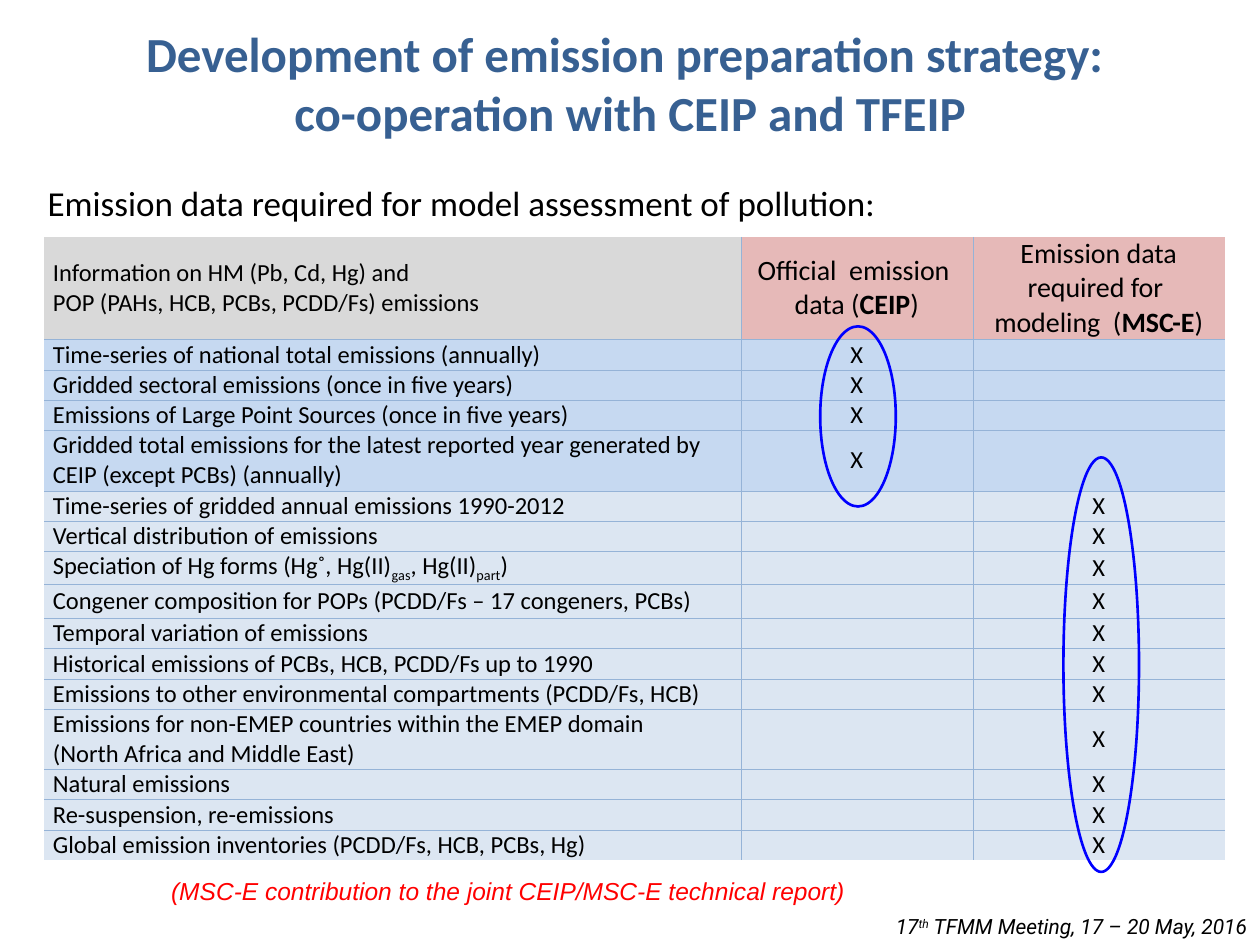
from lxml.etree import SubElement
from pptx import Presentation
from pptx.dml.color import RGBColor
from pptx.enum.shapes import MSO_SHAPE
from pptx.enum.text import MSO_ANCHOR, MSO_AUTO_SIZE, PP_ALIGN
from pptx.oxml.ns import qn
from pptx.util import Inches, Pt


def rgb(value):
    return RGBColor.from_string(value)


def write(paragraph, segments, size, font="Calibri", color="000000", bold=False, italic=False):
    for text, style in segments:
        for index, line in enumerate(text.split("\n")):
            if index:
                paragraph.add_line_break()
            run = paragraph.add_run()
            run.text = line
            run.font.size = Pt(size)
            run.font.name = font
            run.font.color.rgb = rgb(color)
            run.font.bold = bold or style == "bold"
            run.font.italic = italic
            if style in BASELINES:
                run.font._element.set("baseline", BASELINES[style])


BASELINES = {"super": "30000", "sub": "-25000"}
GRID_COLOR = "95B3D7"
HEADINGS = [
    [("Information on HM (Pb, Cd, Hg) and \nPOP (PAHs, HCB, PCBs, PCDD/Fs) emissions", "")],
    [("Official  emission \ndata (", ""), ("CEIP", "bold"), (")", "")],
    [("Emission data required for  modeling  (", ""), ("MSC-E", "bold"), (")", "")],
]
OFFICIAL = [
    "Time-series of national total emissions (annually)",
    "Gridded sectoral emissions (once in five years)",
    "Emissions of Large Point Sources (once in five years)",
    "Gridded total emissions for the latest reported year generated by CEIP (except PCBs) (annually)",
]
MODELING = [
    "Time-series of gridded annual emissions 1990-2012",
    "Vertical distribution of emissions",
    [("Speciation of Hg forms (Hg˚, Hg(II)", ""), ("gas", "sub"), (", Hg(II)", ""),
     ("part", "sub"), (")", "")],
    "Congener composition for POPs (PCDD/Fs – 17 congeners, PCBs)",
    "Temporal variation of emissions",
    "Historical emissions of PCBs, HCB, PCDD/Fs up to 1990",
    "Emissions to other environmental compartments (PCDD/Fs, HCB)",
    "Emissions for non-EMEP countries within the EMEP domain\n(North Africa and Middle East)",
    "Natural emissions",
    "Re-suspension, re-emissions",
    "Global emission inventories (PCDD/Fs, HCB, PCBs, Hg)",
]

presentation = Presentation()
presentation.slide_width = Inches(10)
presentation.slide_height = Inches(7.5)
slide = presentation.slides.add_slide(presentation.slide_layouts[5])

title = slide.shapes.title
title.left, title.top, title.width, title.height = Inches(0), Inches(0.32), Inches(10), Inches(0.67)
title.text_frame.auto_size = MSO_AUTO_SIZE.NONE
title.text_frame.vertical_anchor = MSO_ANCHOR.MIDDLE
heading = title.text_frame.paragraphs[0]
heading.alignment = PP_ALIGN.CENTER
write(heading, [("Development of emission preparation strategy: \nco-operation with CEIP and TFEIP", "")],
      28, color="376092", bold=True)

rows = [(HEADINGS, ["D9D9D9", "E6B9B8", "E6B9B8"])]
for item in OFFICIAL:
    rows.append(([item, "X", ""], ["C6D9F1"] * 3))
for item in MODELING:
    rows.append(([item, "", "X"], ["DCE6F2"] * 3))
special_heights = {0: 0.71, 4: 0.48, 8: 0.27, 12: 0.48}

requirements = slide.shapes.add_table(
    len(rows), 3, Inches(0.35), Inches(1.88), Inches(9.37), Inches(4.88)).table
for column, width in zip(requirements.columns, [5.53, 1.84, 2]):
    column.width = Inches(width)

for row, (contents, fills) in enumerate(rows):
    requirements.rows[row].height = Inches(special_heights.get(row, 0.24))
    for col, (content, fill) in enumerate(zip(contents, fills)):
        cell = requirements.cell(row, col)
        cell.vertical_anchor = MSO_ANCHOR.MIDDLE
        cell.margin_left = cell.margin_right = Inches(0.07)
        cell.margin_top = cell.margin_bottom = 0
        inner_edges = {"a:lnL": col > 0, "a:lnR": col < 2,
                       "a:lnT": row > 0, "a:lnB": row < len(rows) - 1}
        for edge, is_inner in inner_edges.items():
            border = SubElement(cell._tc.get_or_add_tcPr(), qn(edge), w=str(Pt(0.25)))
            if is_inner:
                solid = SubElement(border, qn("a:solidFill"))
                SubElement(solid, qn("a:srgbClr"), val=GRID_COLOR)
            else:
                SubElement(border, qn("a:noFill"))
        cell.fill.solid()
        cell.fill.fore_color.rgb = rgb(fill)
        paragraph = cell.text_frame.paragraphs[0]
        paragraph.alignment = PP_ALIGN.CENTER if col else PP_ALIGN.LEFT
        size = 16 if row == 0 and col else 14
        if content:
            segments = [(content, "")] if isinstance(content, str) else content
            write(paragraph, segments, size)
        else:
            SubElement(paragraph._p, qn("a:endParaRPr"), sz=str(size * 100))

captions = [
    ((0.28, 1.39, 8.9, 0.44), PP_ALIGN.LEFT,
     [("Emission data required for model assessment of pollution:", "")],
     20, "Calibri", "000000", False),
    ((1.12, 6.9, 5.83, 0.33), PP_ALIGN.CENTER,
     [("(MSC-E contribution to the joint CEIP/MSC-E technical report)", "")],
     14, "Arial", "FF0000", True),
    ((6.69, 7.2, 3.31, 0.3), PP_ALIGN.RIGHT,
     [("17", ""), ("th", "super"), (" TFMM Meeting, 17 – 20 May, 2016", "")],
     12, "Roboto", "000000", True),
]
for place, alignment, segments, size, font, color, italic in captions:
    caption = slide.shapes.add_textbox(*map(Inches, place)).text_frame
    caption.word_wrap = True
    caption.paragraphs[0].alignment = alignment
    write(caption.paragraphs[0], segments, size, font, color, italic=italic)

for left, top, height in [(6.51, 2.59, 1.43), (8.44, 3.63, 3.29)]:
    highlight = slide.shapes.add_shape(
        MSO_SHAPE.OVAL, Inches(left), Inches(top), Inches(0.6), Inches(height))
    highlight.shadow.inherit = False
    highlight.fill.background()
    highlight.line.color.rgb = rgb("0000FF")
    highlight.line.width = Pt(1.5)

presentation.save("out.pptx")
